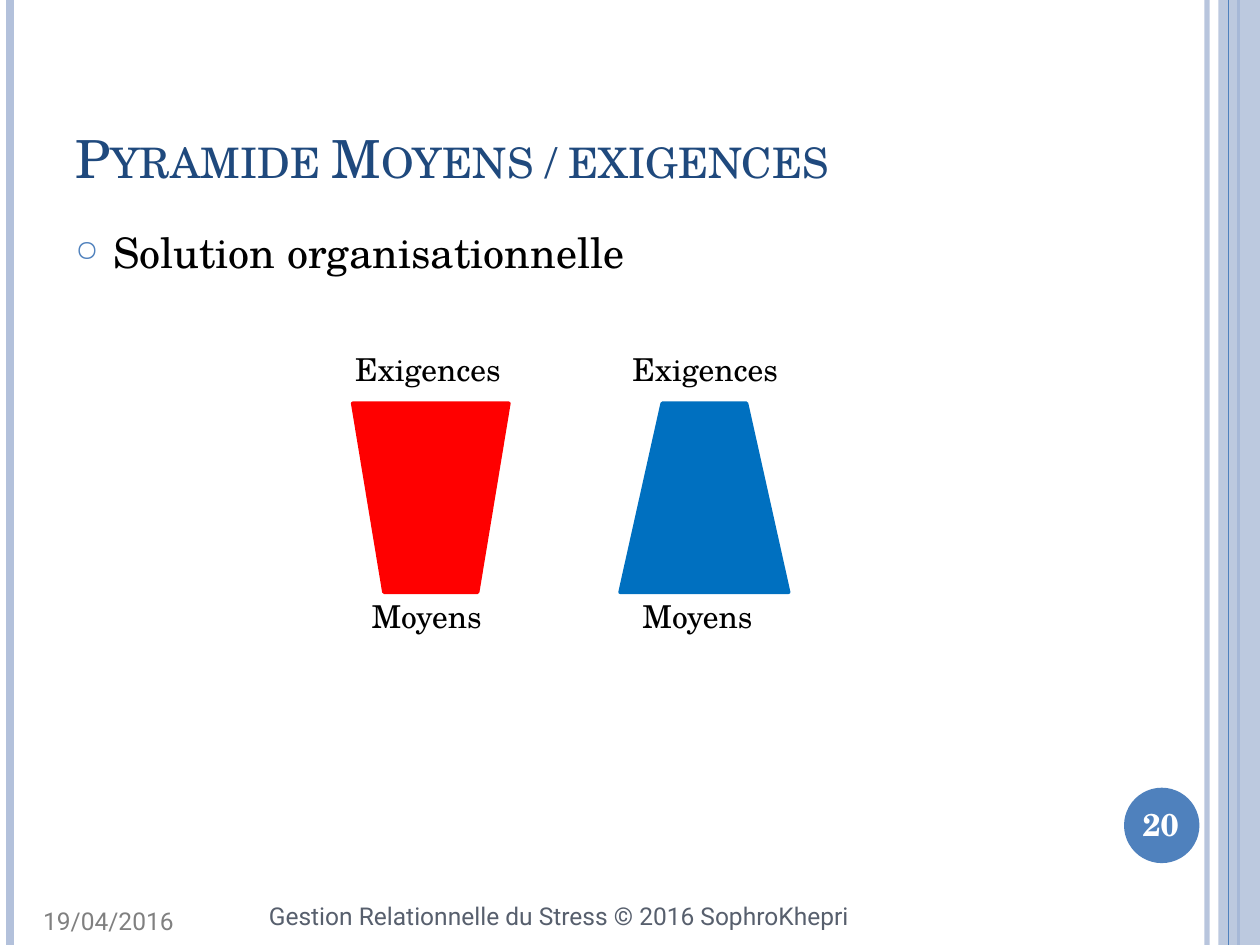
import pptx
import pptx.dml.color
import pptx.enum.shapes
import pptx.enum.text
import pptx.oxml
import pptx.oxml.ns
import pptx.util

Cm = pptx.util.Cm
Pt = pptx.util.Pt
qn = pptx.oxml.ns.qn
PRESET = pptx.enum.shapes.MSO_SHAPE
ALIGN = pptx.enum.text.PP_ALIGN
ANCHOR = pptx.enum.text.MSO_ANCHOR

SERIF = "TeX Gyre Schola"
SANS = "Roboto"
BLUE = "4F81BD"
PALE = "B3C1DB"
HEIGHT = 19.05


def color(hex_value):
    return pptx.dml.color.RGBColor.from_string(hex_value)


def make_element(parent, tag, **attributes):
    child = parent.makeelement(qn(tag), attributes)
    parent.append(child)
    return child


def set_opacity(part, percent):
    tint = next(part.element.iter(qn("a:srgbClr")))
    make_element(tint, "a:alpha", val=str(percent * 1000))


def add_stripe(slide, x, width, hex_value):
    stripe = slide.shapes.add_connector(
        pptx.enum.shapes.MSO_CONNECTOR.STRAIGHT, Cm(x), Cm(0), Cm(x), Cm(HEIGHT)
    )
    stripe.line.color.rgb = color(hex_value)
    stripe.line.width = Pt(width)
    make_element(stripe.element.spPr, "a:effectLst")
    return stripe


def add_figure(slide, preset, box, hex_value, outline=0):
    figure = slide.shapes.add_shape(preset, *map(Cm, box))
    figure.shadow.inherit = False
    figure.fill.solid()
    figure.fill.fore_color.rgb = color(hex_value)
    if outline:
        figure.line.color.rgb = color(hex_value)
        figure.line.width = Pt(outline)
    else:
        figure.line.fill.background()
    return figure


def add_bullet(paragraph, symbol, hex_value, percent, indent):
    properties = paragraph._p.get_or_add_pPr()
    properties.set("marL", str(Cm(indent)))
    properties.set("indent", str(Cm(-indent)))
    make_element(make_element(properties, "a:buClr"), "a:srgbClr", val=hex_value)
    make_element(properties, "a:buSzPct", val=str(percent * 1000))
    make_element(properties, "a:buChar", char=symbol)


def add_text(slide, box, text, size, hex_value="000000", name=SERIF, bold=False,
             align=ALIGN.LEFT, anchor=ANCHOR.TOP, wrap=True):
    text_box = slide.shapes.add_textbox(*map(Cm, box))
    frame = text_box.text_frame
    frame.word_wrap = wrap
    frame.vertical_anchor = anchor
    paragraph = frame.paragraphs[0]
    paragraph.alignment = align
    run = paragraph.add_run()
    run.text = text
    font_format = {"name": name, "size": Pt(size), "bold": bold}
    for attribute, value in font_format.items():
        setattr(run.font, attribute, value)
    run.font.color.rgb = color(hex_value)
    return text_box


def add_frame(slide):
    right_edge = add_stripe(slide, 24.33, 3, PALE)
    set_opacity(right_edge, 93)
    add_stripe(slide, 0.2, 4.5, PALE)
    add_stripe(slide, 24.97, 1.5, BLUE)
    band = add_figure(slide, PRESET.RECTANGLE, (24.56, 0, 0.84, HEIGHT), PALE)
    set_opacity(band, 87)
    add_stripe(slide, 24.77, 0.75, BLUE)


def add_footer(slide):
    add_figure(slide, PRESET.OVAL, (22.66, 15.88, 1.52, 1.52), BLUE)
    add_text(slide, (0.62, 18.14, 3.87, 0.91), "19/04/2016", 14, "808080", SANS)
    add_text(slide, (2.69, 18.03, 14.68, 1.02),
             "Gestion Relationnelle du Stress © 2016 SophroKhepri",
             14, "575F6D", SANS, align=ALIGN.RIGHT)
    add_text(slide, (22.5, 16.1, 1.8, 1.02), "20", 18, "FFFFFF",
             bold=True, align=ALIGN.CENTER)


def add_headings(slide):
    title = add_text(slide, (1.27, 0.76, 20.75, 3.18), "Pyramide Moyens / exigences",
                     30, "1F497D", anchor=ANCHOR.BOTTOM)
    next(title.element.iter(qn("a:rPr"))).set("cap", "small")
    solution = add_text(slide, (1.27, 4.45, 20.75, 13.54), "Solution organisationnelle", 24)
    add_bullet(solution.text_frame.paragraphs[0], "○", BLUE, 70, 0.76)


def add_pyramids(slide):
    pyramids = [
        (PRESET.FLOWCHART_MANUAL_OPERATION, 7.11, 3.15, "FF0000", 6.91, 7.24),
        (PRESET.TRAPEZOID, 12.5, 3.4, "0070C0", 12.5, 12.7),
    ]
    for preset, left, width, hex_value, demands_left, means_left in pyramids:
        add_figure(slide, preset, (left, 8.13, width, 3.81), hex_value, 2)
        add_text(slide, (demands_left, 6.93, 3.48, 1.02), "Exigences", 18, wrap=False)
        add_text(slide, (means_left, 11.91, 2.77, 1.02), "Moyens", 18, wrap=False)


def main():
    presentation = pptx.Presentation()
    presentation.slide_width = Cm(25.4)
    presentation.slide_height = Cm(HEIGHT)
    slide = presentation.slides.add_slide(presentation.slide_layouts[6])
    add_frame(slide)
    add_footer(slide)
    add_headings(slide)
    add_pyramids(slide)
    presentation.save("out.pptx")


if __name__ == "__main__":
    main()
